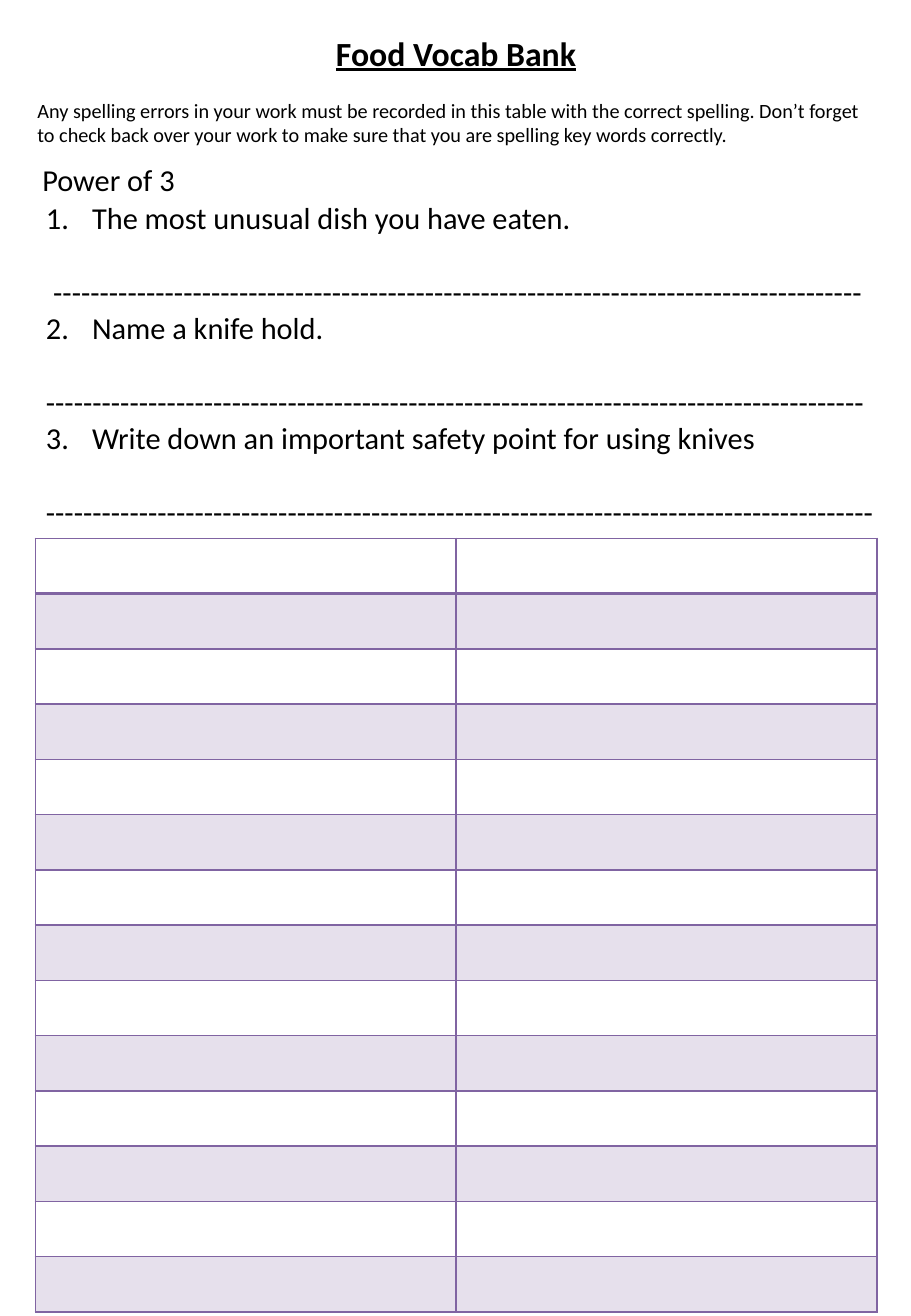
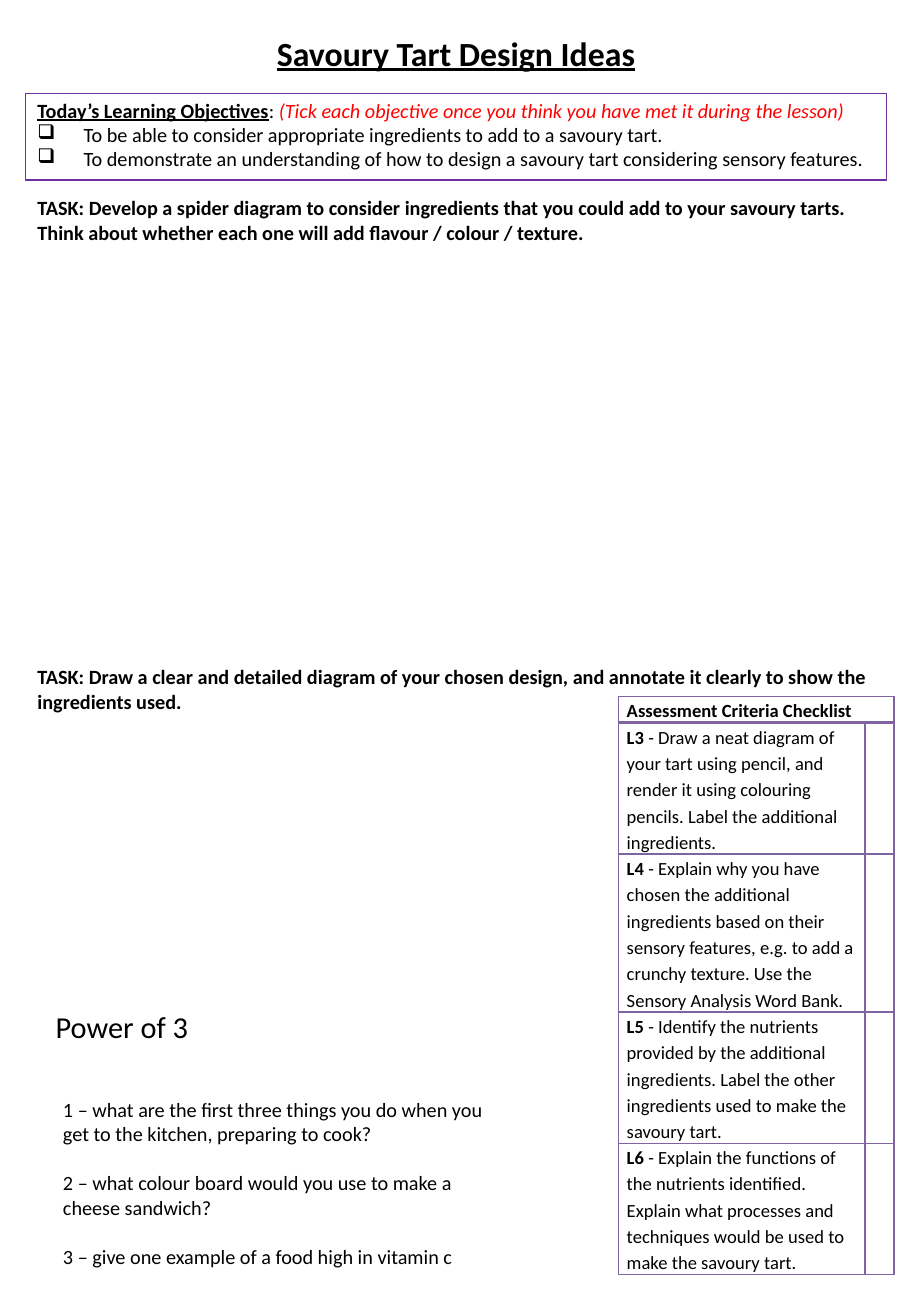
import pptx
import pptx.util
import pptx.dml.color
import pptx.enum.text
import pptx.enum.shapes
import pptx.oxml

Inches = pptx.util.Inches
Pt = pptx.util.Pt
RGB = pptx.dml.color.RGBColor.from_string
PP_ALIGN = pptx.enum.text.PP_ALIGN
MSO_ANCHOR = pptx.enum.text.MSO_ANCHOR
COLORS = {"text": "000000", "hint": "FF0000", "frame": "7030A0",
          "grid": "8064A2", "band": "E6E0EC", "white": "FFFFFF"}
FONT = "Calibri"
LINE = 14.65
NS = 'xmlns:a="http://schemas.openxmlformats.org/drawingml/2006/main"'


def write(tf, text, size=12, color="text", bold=False, italic=False, underline=False,
          align=None, before=0, after=0, spacing=None, left=0, bullet=None, join=False):
    p = tf.paragraphs[-1]
    if not join:
        if p.runs:
            p = tf.add_paragraph()
        p.alignment = align
        p.space_before, p.space_after = Pt(before), Pt(after)
        if spacing:
            p.line_spacing = spacing
        pPr = p._p.get_or_add_pPr()
        pPr.set("marL", str(Inches(left)))
        pPr.set("indent", str(Inches(-left if bullet else 0)))
        if isinstance(bullet, int):
            pPr.append(pptx.oxml.parse_xml(
                f'<a:buAutoNum {NS} type="arabicPeriod" startAt="{bullet}"/>'))
        elif bullet:
            pPr.append(pptx.oxml.parse_xml(f'<a:buChar {NS} char="{bullet}"/>'))
    r = p.add_run()
    r.text = text
    r.font.name, r.font.size = FONT, Pt(size)
    r.font.bold, r.font.italic, r.font.underline = bold, italic, underline
    r.font.color.rgb = RGB(COLORS[color])


def style_cell(cell, fill=None, bottom=1, top=1):
    tcPr = cell._tc.get_or_add_tcPr()
    for side, width in (("L", 1), ("R", 1), ("T", top), ("B", bottom)):
        tcPr.append(pptx.oxml.parse_xml(
            f'<a:ln{side} {NS} w="{Pt(width)}"><a:solidFill>'
            f'<a:srgbClr val="{COLORS["grid"]}"/></a:solidFill></a:ln{side}>'))
    if fill:
        cell.fill.solid()
        cell.fill.fore_color.rgb = RGB(COLORS[fill])
    else:
        cell.fill.background()


prs = pptx.Presentation()
prs.slide_width, prs.slide_height = Inches(7.5), Inches(10.83)

slides, bodies = [], []
for title, left, top, width in (("Food Vocab Bank", 0.25, 1.28, 1.73),
                                ("Savoury Tart Design Ideas", 0.36, 8.25, 2.05)):
    s = prs.slides.add_slide(prs.slide_layouts[6])
    tf = s.shapes.add_textbox(Inches(0.21), Inches(0.22), Inches(7.09), Inches(10.32)).text_frame
    tf.word_wrap = True
    write(tf, title, size=20, bold=True, underline=True, align=PP_ALIGN.CENTER, after=LINE)
    sp = s.shapes.add_textbox(Inches(left), Inches(top), Inches(width), Inches(0.4))
    sp.text_frame.word_wrap = True
    write(sp.text_frame, "Power of 3", size=18)
    slides.append(s)
    bodies.append(tf)

s, tf = slides[0], bodies[0]
write(tf, "Any spelling errors in your work must be recorded in this table with the correct "
          "spelling. Don’t forget to check back over your work to make sure that you are "
          "spelling key words correctly.")

tf = s.shapes.add_textbox(Inches(0.28), Inches(1.59), Inches(7.17), Inches(3.13)).text_frame
tf.word_wrap = True
questions = (("The most unusual dish you have eaten.", 87, 0.06),
             ("Name a knife hold.", 88, 0),
             ("Write down an important safety point for using knives", 89, 0))
for number, (question, dashes, left) in enumerate(questions, 1):
    write(tf, question, size=18, left=0.38, bullet=number)
    write(tf, "-" * dashes, size=18, left=left, before=22)

vocab = s.shapes.add_table(14, 2, Inches(0.29), Inches(4.43), Inches(6.93), Inches(6.37)).table
vocab.first_row = vocab.horz_banding = False
for i, row in enumerate(vocab.rows):
    for cell in row.cells:
        style_cell(cell, fill="band" if i % 2 else None,
                   bottom=2 if i == 0 else 1, top=2 if i == 1 else 1)

s, tf = slides[1], bodies[1]
write(tf, "Today’s Learning Objectives", bold=True, underline=True)
write(tf, ": ", join=True)
write(tf, "(Tick each objective once you think you have met it during the lesson)",
      color="hint", italic=True, join=True)
for objective in ("To be able to consider appropriate ingredients to add to a savoury tart.",
                  "To demonstrate an understanding of how to design a savoury tart "
                  "considering sensory features."):
    write(tf, objective, left=0.38, bullet="❑")
write(tf, "TASK: Develop a spider diagram to consider ingredients that you could add to your "
          "savoury tarts. Think about whether each one will add flavour / colour / texture.",
      bold=True, before=LINE)
write(tf, "TASK: Draw a clear and detailed diagram of your chosen design, and annotate it "
          "clearly to show the ingredients used.", bold=True, before=17 * LINE)

frame = s.shapes.add_shape(pptx.enum.shapes.MSO_SHAPE.RECTANGLE,
                           Inches(0.21), Inches(0.77), Inches(7.09), Inches(0.71))
frame.shadow.inherit = False
frame.fill.background()
frame.line.color.rgb = RGB(COLORS["frame"])
frame.line.width = Pt(1)

criteria = (
    ("Assessment Criteria Checklist", "", 0.22),
    ("L3", " - Draw a neat diagram of your tart using pencil, and render it using colouring "
           "pencils. Label the additional ingredients.", 1.08),
    ("L4", " - Explain why you have chosen the additional ingredients based on their sensory "
           "features, e.g. to add a crunchy texture. Use the Sensory Analysis Word Bank.", 1.3),
    ("L5", " - Identify the nutrients provided by the additional ingredients. Label the other "
           "ingredients used to make the savoury tart.", 1.08),
    ("L6", " - Explain the functions of the nutrients identified. Explain what processes and "
           "techniques would be used to make the savoury tart.", 1.08))
checklist = s.shapes.add_table(len(criteria), 2, Inches(5.09), Inches(5.73),
                               Inches(2.27), Inches(4.76)).table
checklist.first_row = checklist.horz_banding = False
checklist.columns[0].width, checklist.columns[1].width = Inches(2.03), Inches(0.24)
checklist.cell(0, 0).merge(checklist.cell(0, 1))
for i, (level, text, height) in enumerate(criteria):
    row = checklist.rows[i]
    row.height = Inches(height)
    for cell in row.cells:
        cell.margin_left = cell.margin_right = Inches(0.07)
        cell.margin_top = cell.margin_bottom = 0
        cell.vertical_anchor = MSO_ANCHOR.MIDDLE
        style_cell(cell, fill="white", bottom=2 if i == 0 else 1, top=2 if i == 1 else 1)
    tf = row.cells[0].text_frame
    write(tf, level, size=11, bold=True, spacing=1.15)
    if text:
        write(tf, text, size=11, join=True)

tf = s.shapes.add_textbox(Inches(0.42), Inches(8.98), Inches(3.75), Inches(1.51)).text_frame
tf.word_wrap = True
for question in ("1 – what are the first three things you do when you get to the kitchen, "
                 "preparing to cook?",
                 "2 – what colour board would you use to make a cheese sandwich?",
                 "3 – give one example of a food high in vitamin c"):
    write(tf, question, after=LINE)

prs.save("out.pptx")
